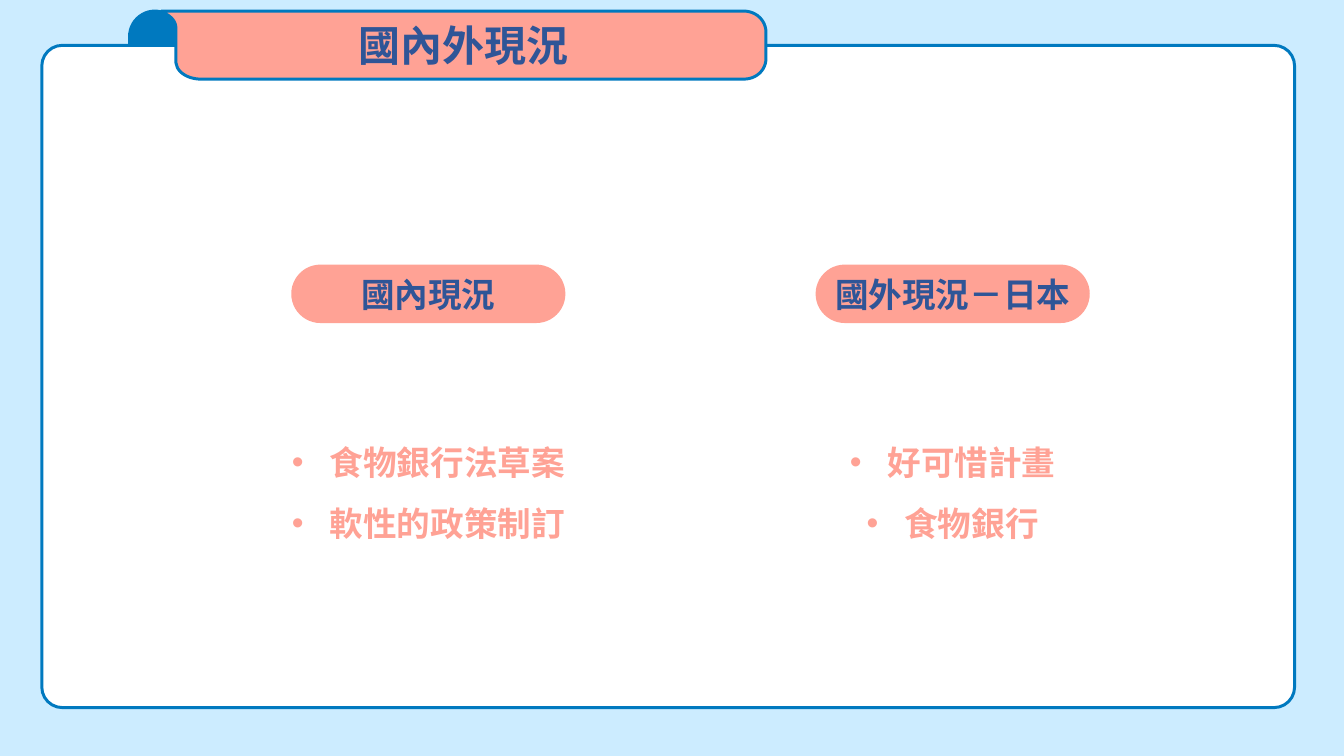
from pptx import Presentation
from pptx import util as u
from pptx.dml.color import RGBColor
from pptx.enum import shapes, text

SKY = RGBColor(0xCC, 0xEC, 0xFF)
BLUE = RGBColor(0x00, 0x79, 0xBF)
NAVY = RGBColor(0x2F, 0x55, 0x97)
CORAL = RGBColor(0xFF, 0xA2, 0x95)
WHITE = RGBColor(0xFF, 0xFF, 0xFF)
KIND = shapes.MSO_SHAPE


def place(shape, left, top, width, height):
    shape.left, shape.top = u.Inches(left), u.Inches(top)
    shape.width, shape.height = u.Inches(width), u.Inches(height)


def paint(shape, fill, line=None):
    shape.shadow.inherit = False
    shape.fill.solid()
    shape.fill.fore_color.rgb = fill
    if line is None:
        shape.line.fill.background()
    else:
        shape.line.color.rgb = line
        shape.line.width = u.Pt(4.25)


def write(shape, lines, size, color):
    frame = shape.text_frame
    frame.word_wrap = True
    frame.auto_size = text.MSO_AUTO_SIZE.NONE
    frame.vertical_anchor = text.MSO_ANCHOR.MIDDLE
    frame.text = "\n".join(lines)
    for para in frame.paragraphs:
        para.alignment = text.PP_ALIGN.CENTER
        font = para.font
        font.name, font.size, font.bold = "Lato", u.Pt(size), True
        font.color.rgb = color
    return frame


def add_round(slide, kind, box, adjust, fill, line=None):
    shape = slide.shapes.add_shape(kind, *map(u.Inches, box))
    shape.adjustments[0] = adjust
    paint(shape, fill, line)
    return shape


def curve(start, ctrl1, ctrl2, end, steps=12):
    """Points along a cubic curve, without its start."""
    for i in range(1, steps + 1):
        t = i / steps
        s = 1 - t
        yield tuple(s**3 * a + 3 * s * s * t * b + 3 * s * t * t * c + t**3 * d
                    for a, b, c, d in zip(start, ctrl1, ctrl2, end))


def raise_top(slide, shape):
    """Placeholders start at the back; bring one to the front."""
    slide.shapes.element.append(shape.element)


def add_ribbon(slide, left, top, width, height, title):
    right, low = width, height
    points = [
        (right - 0.44, 0),
        *curve((right - 0.44, 0), (right - 0.19, 0), (right, 0.19), (right, 0.42)),
        (right, low - 0.41),
        *curve((right, low - 0.41), (right, low - 0.18),
               (right - 0.19, low), (right - 0.44, low)),
        (0.79, low),
        *curve((0.79, low), (0.58, low), (0.39, low - 0.09), (0.32, low - 0.23)),
        (0.29, low - 0.33), (0.29, 0.33),
        *curve((0.29, 0.33), (0.29, 0.21), (0.2, 0.11), (0.08, 0.05)),
        (0, 0.03),
    ]
    spots = [(u.Inches(left + x), u.Inches(top + y)) for x, y in points]
    build = slide.shapes.build_freeform(u.Inches(left), u.Inches(top))
    build.add_line_segments(spots, close=True)
    paint(build.convert_to_shape(), CORAL, BLUE)

    head = slide.shapes.title
    place(head, left, top, width, height)
    write(head, [title], 60, NAVY)
    raise_top(slide, head)


def add_frame(slide, left, top, width, height, title):
    # Curl behind the card, the card, then the ribbon
    curl = (left + 1.74, top - 0.68, 1.01, 1.96)
    add_round(slide, KIND.ROUND_2_SAME_RECTANGLE, curl, 0.5, BLUE, BLUE)
    card = (left, top, width, height)
    add_round(slide, KIND.ROUNDED_RECTANGLE, card, 0.031, WHITE, BLUE)
    add_ribbon(slide, left + 2.37, top - 0.68, 12, 1.35, title)


def add_topic(slide, body, left, top, width, height, name, items):
    # Heading pill, centred over the list
    pill = (left + (width - 5.44) / 2, top, 5.44, 1.16)
    shape = add_round(slide, KIND.ROUNDED_RECTANGLE, pill, 0.5, CORAL)
    write(shape, [name], 48, NAVY)

    # Bulleted list
    place(body, left, top + height - 2.54, width, 2.54)
    frame = write(body, items, 48, CORAL)
    frame.margin_left = frame.margin_right = u.Inches(0.06)
    frame.margin_top = frame.margin_bottom = u.Inches(0.06)
    for para in frame.paragraphs:
        para.line_spacing = 1.5
        para.space_before = u.Pt(0)
        props = para._p.get_or_add_pPr()
        props.set("marL", str(u.Inches(0.75)))
        props.set("indent", str(u.Inches(-0.75)))
    raise_top(slide, body)


def main():
    deck = Presentation()
    deck.slide_width, deck.slide_height = u.Inches(26.67), u.Inches(15)
    slide = deck.slides.add_slide(deck.slide_layouts.get_by_name("Two Content"))
    slide.background.fill.solid()
    slide.background.fill.fore_color.rgb = SKY

    add_frame(slide, 0.83, 0.9, 24.86, 13.14, "國內外現況")
    topics = [
        (4.15, 8.7, "國內現況", ["食物銀行法草案", "軟性的政策制訂"]),
        (14.04, 9.73, "國外現況－日本", ["好可惜計畫", "食物銀行"]),
    ]
    bodies = list(slide.placeholders)[1:]
    for body, (left, width, name, items) in zip(bodies, topics):
        add_topic(slide, body, left, 5.25, width, 5.59, name, items)

    deck.save("out.pptx")


if __name__ == "__main__":
    main()
